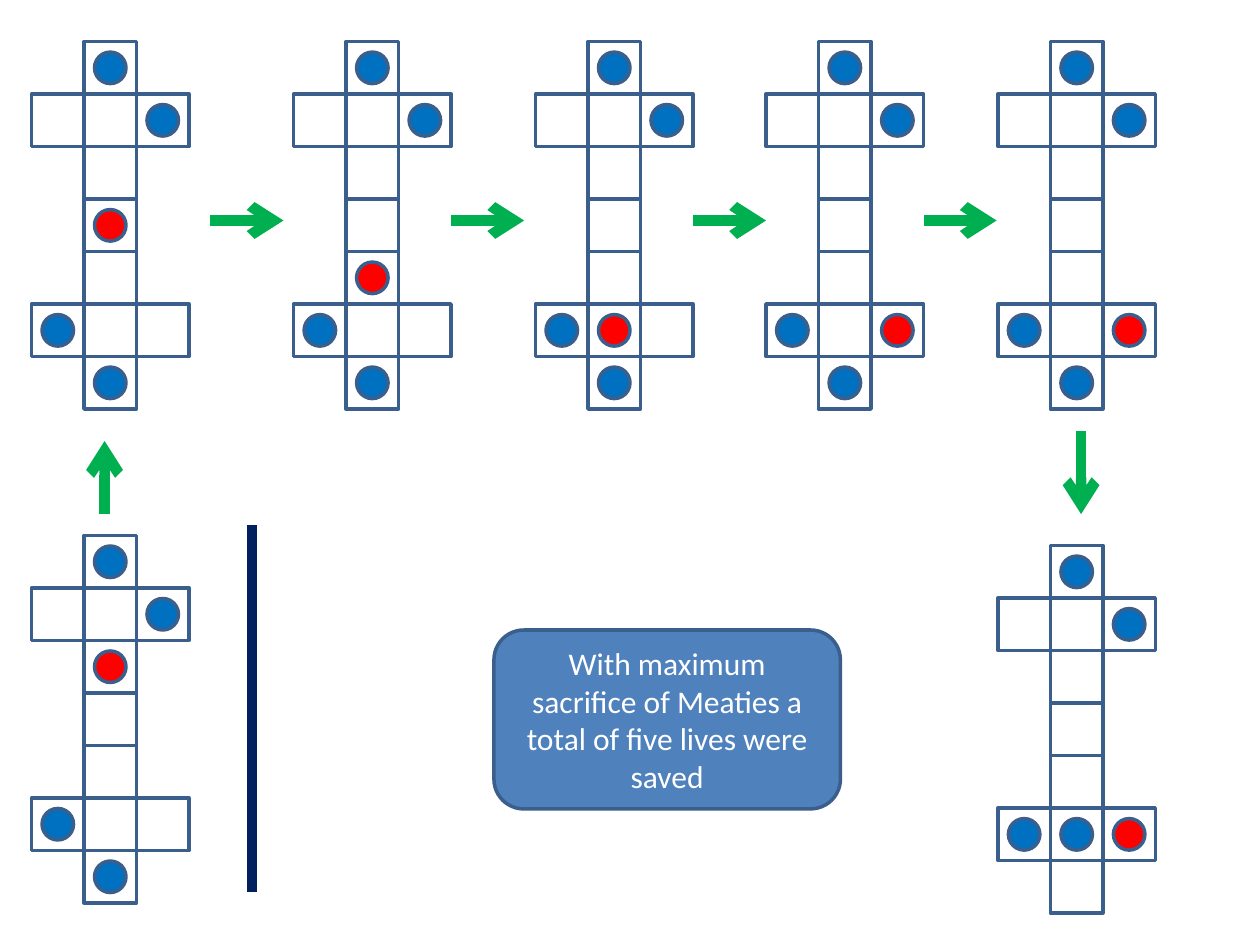
from lxml import etree
from pptx import Presentation
from pptx.dml.color import RGBColor
from pptx.enum.shapes import MSO_CONNECTOR, MSO_SHAPE
from pptx.enum.text import MSO_ANCHOR, PP_ALIGN
from pptx.oxml.ns import qn
from pptx.util import Inches, Pt

RECTANGLE = MSO_SHAPE.RECTANGLE
OVAL = MSO_SHAPE.OVAL
ROUNDED = MSO_SHAPE.ROUNDED_RECTANGLE
STRAIGHT = MSO_CONNECTOR.STRAIGHT
MIDDLE = MSO_ANCHOR.MIDDLE
CENTER = PP_ALIGN.CENTER

WHITE, OUTLINE, PANEL = "FFFFFF", "3A5F8C", "4F81BD"
BLUE, RED, GREEN, NAVY = "0070C0", "FF0000", "00B050", "002060"

CELL = 5 / 12
DISC = 0.25
ARROW_LENGTH = 0.58

# Board squares and disc places as (column, row)
SQUARES = [(1, row) for row in range(7)] + [
    (column, row) for row in (1, 5) for column in (0, 2)]
START_BLUES = [(1, 0), (2, 1), (0, 5), (1, 6)]
FINAL_BLUES = [(1, 0), (2, 1), (0, 5), (1, 5)]

# Boards in order of play: left, top, red disc, blue discs
BOARDS = [
    (0.25, 4.25, (1, 2), START_BLUES),
    (0.25, 0.33, (1, 3), START_BLUES),
    (2.33, 0.33, (1, 4), START_BLUES),
    (4.25, 0.33, (1, 5), START_BLUES),
    (6.08, 0.33, (2, 5), START_BLUES),
    (7.92, 0.33, (2, 5), START_BLUES),
    (7.92, 4.33, (2, 5), FINAL_BLUES),
]


def color(hex_string):
    return RGBColor.from_string(hex_string)


def add_shape(slide, kind, left, top, width, height, fill):
    shape = slide.shapes.add_shape(
        kind, Inches(left), Inches(top), Inches(width), Inches(height))
    shape.shadow.inherit = False
    shape.fill.solid()
    shape.fill.fore_color.rgb = color(fill)
    shape.line.color.rgb = color(OUTLINE)
    shape.line.width = Pt(2)
    return shape


def add_disc(slide, left, top, place, fill):
    column, row = place
    margin = (CELL - DISC) / 2
    add_shape(slide, OVAL, left + column * CELL + margin,
              top + row * CELL + margin, DISC, DISC, fill)


def add_board(slide, left, top, red, blues):
    for column, row in SQUARES:
        add_shape(slide, RECTANGLE, left + column * CELL, top + row * CELL,
                  CELL, CELL, WHITE)
    for blue in blues:
        add_disc(slide, left, top, blue, BLUE)
    add_disc(slide, left, top, red, RED)


def add_line(slide, start, end, line_color, arrow=False):
    connector = slide.shapes.add_connector(
        STRAIGHT, *(Inches(value) for value in start + end))
    connector.line.color.rgb = color(line_color)
    connector.line.width = Pt(6)
    if arrow:
        outline = connector.line._get_or_add_ln()
        etree.SubElement(outline, qn("a:tailEnd"), type="arrow")
    etree.SubElement(connector._element.spPr, qn("a:effectLst"))


def add_message(slide, text):
    shape = add_shape(slide, ROUNDED, 3.92, 5, 2.75, 1.42, PANEL)
    frame = shape.text_frame
    frame.word_wrap = True
    frame.vertical_anchor = MIDDLE
    paragraph = frame.paragraphs[0]
    paragraph.text = text
    paragraph.alignment = CENTER
    paragraph.font.name = "Calibri"
    paragraph.font.size = Pt(18)
    paragraph.font.color.rgb = color(WHITE)


def main():
    presentation = Presentation()
    presentation.slide_width = Inches(10)
    presentation.slide_height = Inches(7.5)
    slide = presentation.slides.add_slide(presentation.slide_layouts[6])

    # Boards
    for board in BOARDS:
        add_board(slide, *board)

    # Arrows from board to board
    add_line(slide, (0.83, 4.08), (0.83, 3.5), GREEN, arrow=True)
    for left in (1.67, 3.58, 5.5, 7.33):
        add_line(slide, (left, 1.75), (left + ARROW_LENGTH, 1.75), GREEN, arrow=True)
    add_line(slide, (8.58, 3.42), (8.58, 4.08), GREEN, arrow=True)

    # Divider and message
    add_line(slide, (2, 4.17), (2, 7.08), NAVY)
    add_message(slide, "With maximum sacrifice of Meaties a total of five lives were saved")

    presentation.save("out.pptx")


if __name__ == "__main__":
    main()
